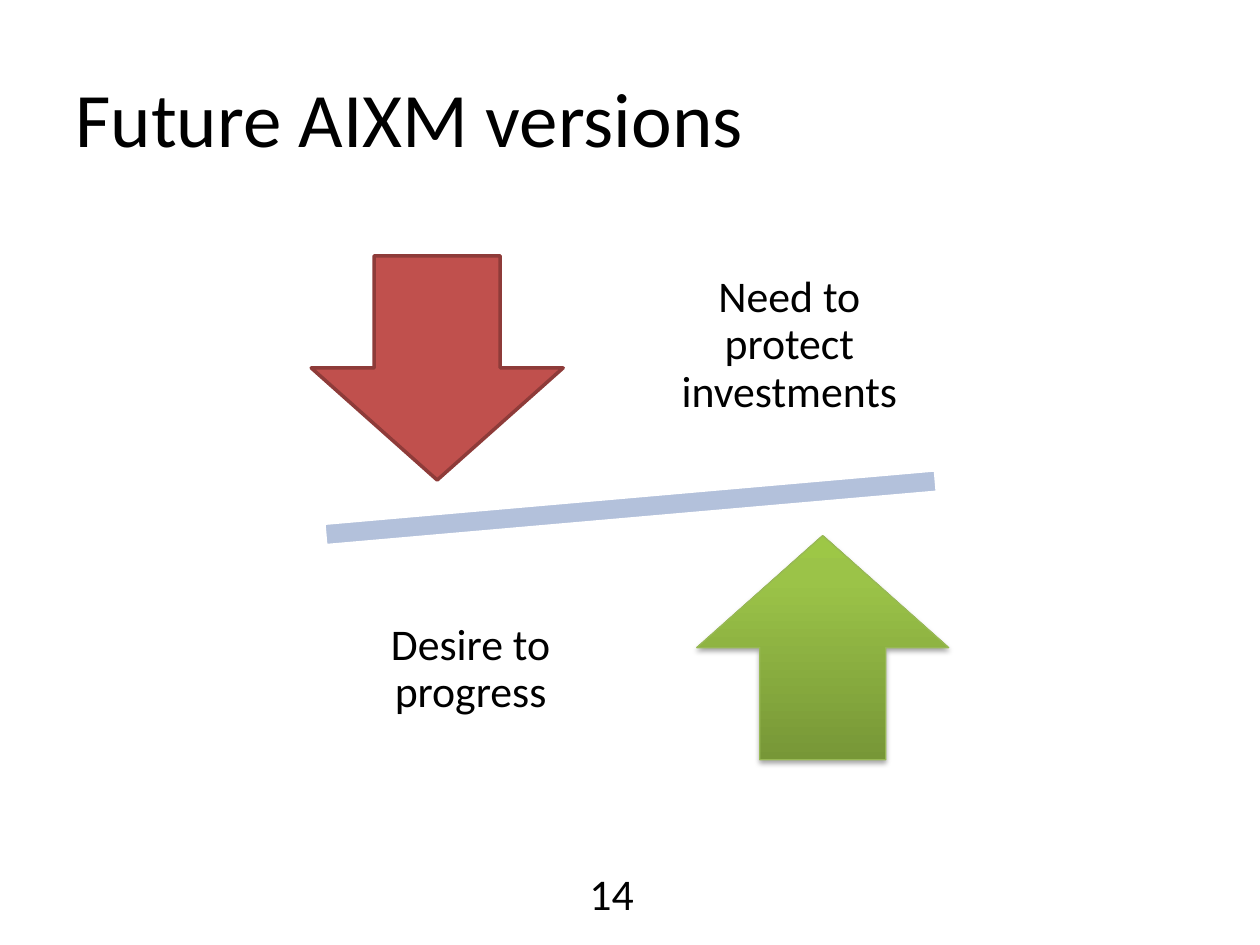
from copy import deepcopy

from lxml.etree import SubElement
from pptx import Presentation
from pptx.dml.color import RGBColor
from pptx.enum.shapes import MSO_SHAPE as Shape
from pptx.enum.text import MSO_ANCHOR as Anchor, PP_ALIGN as Align
from pptx.oxml.ns import qn
from pptx.util import Inches, Pt


def color(value):
    return RGBColor.from_string(value)


def add_text(slide, text, box, size, align=Align.LEFT, inset=None, spacing=None):
    shape = slide.shapes.add_textbox(*map(Inches, box))
    frame = shape.text_frame
    frame.word_wrap = True
    frame.vertical_anchor = Anchor.MIDDLE
    if inset is not None:
        for side in ("left", "right", "top", "bottom"):
            setattr(frame, f"margin_{side}", Inches(inset))
    paragraph = frame.paragraphs[0]
    paragraph.text = text
    paragraph.alignment = align
    if spacing:
        paragraph.line_spacing = spacing
    font_format = {"name": "Calibri", "size": Pt(size)}
    for name, value in font_format.items():
        setattr(paragraph.font, name, value)
    paragraph.font.color.rgb = color("000000")


def add_shape(slide, kind, box, line, width, fill=None, rotation=0):
    shape = slide.shapes.add_shape(kind, *map(Inches, box))
    shape.shadow.inherit = False
    shape.rotation = rotation
    if fill:
        shape.fill.solid()
        shape.fill.fore_color.rgb = color(fill)
    shape.line.color.rgb = color(line)
    shape.line.width = Pt(width)
    return shape


def set_gradient(shape, stops, angle):
    fill = shape.fill
    fill.gradient()
    fill.gradient_angle = angle
    stop_list = shape.element.spPr.find(".//" + qn("a:gsLst"))
    while len(stop_list) < len(stops):
        stop_list.append(deepcopy(stop_list[-1]))
    for stop, (position, value) in zip(fill.gradient_stops, stops):
        stop.position = position
        stop.color.rgb = color(value)


def add_shadow(shape, value, opacity, blur, distance, angle):
    effects = shape.element.spPr.find(qn("a:effectLst"))
    shadow = SubElement(effects, qn("a:outerShdw"), {
        "blurRad": str(Pt(blur)), "dist": str(Pt(distance)),
        "dir": str(angle * 60000), "rotWithShape": "0"})
    tone = SubElement(shadow, qn("a:srgbClr"), val=value)
    SubElement(tone, qn("a:alpha"), val=str(opacity * 1000))


def main():
    presentation = Presentation()
    presentation.slide_width = Inches(10)
    presentation.slide_height = Inches(7.5)
    slide = presentation.slides.add_slide(presentation.slide_layouts[6])

    add_text(slide, "Future AIXM versions", (0.5, 0.3, 9, 1.25), 44)

    add_shape(slide, Shape.MATH_MINUS, (1.69, 3.65, 6.63, 0.76),
              "FFFFFF", 2, "B3C1DB", 355)
    add_shape(slide, Shape.DOWN_ARROW, (2.47, 2.03, 2, 1.78),
              "8E3B39", 2, "C0504D")
    up_arrow = add_shape(slide, Shape.UP_ARROW, (5.53, 4.25, 2, 1.78),
                         "98B955", 0.75)
    set_gradient(up_arrow, [(0, "779737"), (0.8, "9BC348"), (1, "9DC746")], 90)
    add_shadow(up_arrow, "000000", 35, 3.1, 1.8, 90)

    forces = [("Need to protect investments", 5.2, 1.81),
              ("Desire to progress", 2.67, 4.38)]
    for text, left, top in forces:
        add_text(slide, text, (left, top, 2.13, 1.87), 25, Align.CENTER, 0.19, 0.9)

    add_text(slide, "14", (4.58, 6.83, 0.67, 0.52), 25, Align.JUSTIFY)
    presentation.save("out.pptx")


if __name__ == "__main__":
    main()
